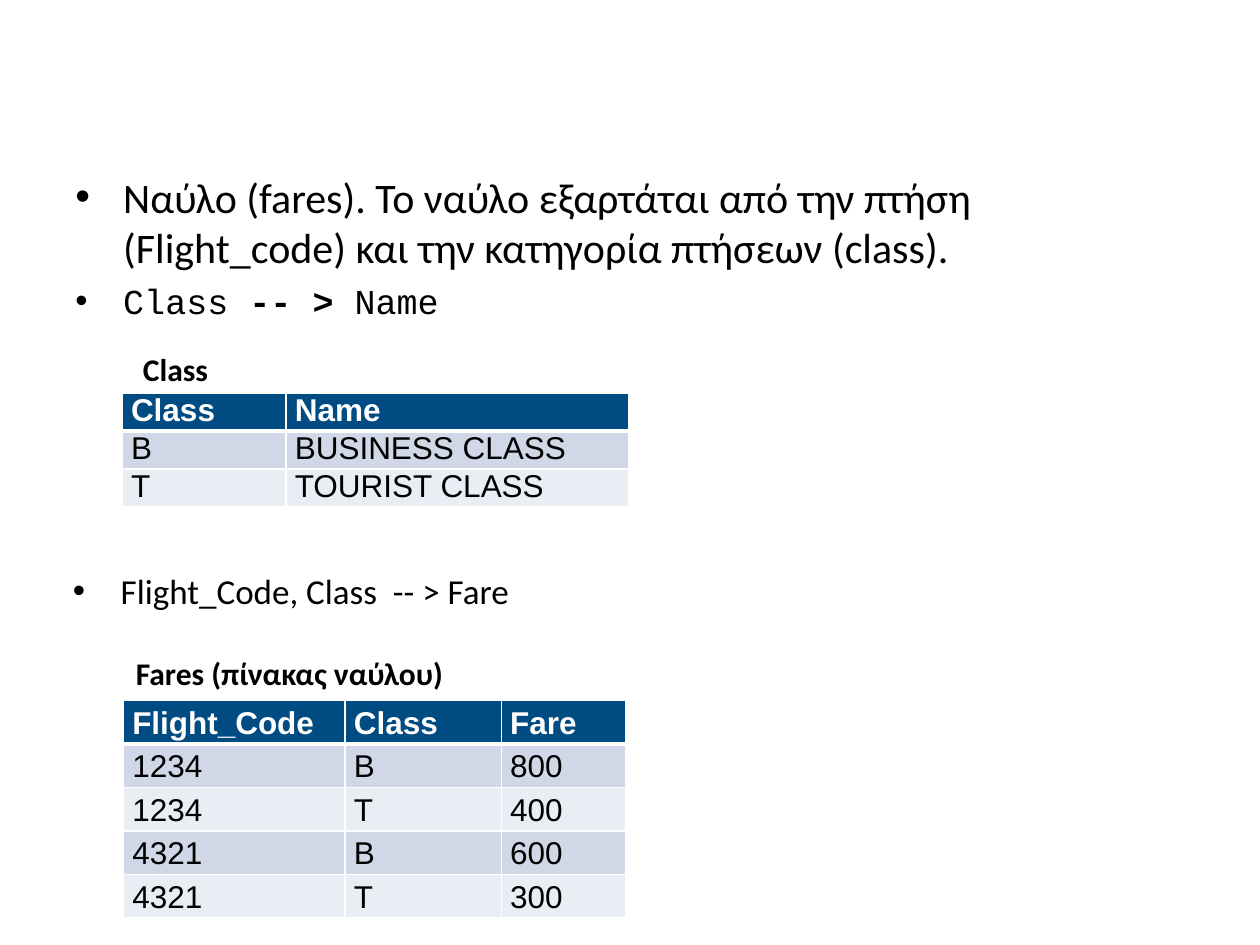
"""Build the slide on fares, their dependencies and the resulting tables."""
from lxml.etree import SubElement
from pptx import Presentation
from pptx.dml.color import RGBColor
from pptx.oxml.ns import qn
from pptx.util import Inches, Pt

WHITE = RGBColor(0xFF, 0xFF, 0xFF)
BLACK = RGBColor(0, 0, 0)
NAVY = RGBColor(0x00, 0x4B, 0x82)
BANDS = [RGBColor(0xD0, 0xD8, 0xE8), RGBColor(0xE9, 0xED, 0xF4)]

BULLET_BOXES = [
    ((0.5, 1.31, 9, 1.56), [
        (24, "Calibri", [("Ναύλο (fares). Το ναύλο εξαρτάται από την πτήση "
                          "(Flight_code) και την κατηγορία πτήσεων (class).", False)]),
        (20, "Courier New", [("Class ", False), ("-- > ", True), ("Name", False)]),
    ]),
    ((0.48, 4.47, 9, 0.63), [
        (20, "Calibri", [("Flight_Code, Class  -- > Fare", False)]),
    ]),
]
CAPTIONS = [
    ((0.98, 2.73, 0.78, 0.4), " Class"),
    ((0.98, 5.14, 2.66, 0.4), "Fares (πίνακας ναύλου)"),
]
TABLES = [
    {"place": (0.97, 3.12), "columns": [1.3, 2.72], "row": 0.28, "spacing": 1.0,
     "rows": [("Class", "Name"), ("B", "BUSINESS CLASS"), ("T", "TOURIST CLASS")]},
    {"place": (0.98, 5.56), "columns": [1.76, 1.24, 0.99], "row": 0.34, "spacing": 1.15,
     "rows": [("Flight_Code", "Class", "Fare"), ("1234", "B", "800"),
              ("1234", "T", "400"), ("4321", "B", "600"), ("4321", "T", "300")]},
]


def set_font(font, size, name, color, bold=False):
    font.size, font.name, font.bold = Pt(size), name, bold
    font.color.rgb = color


def add_bullets(page, place, items):
    frame = page.shapes.add_textbox(*map(Inches, place)).text_frame
    frame.word_wrap = True
    for index, (size, name, spans) in enumerate(items):
        para = frame.add_paragraph() if index else frame.paragraphs[0]
        para.space_before = Pt(size * 0.2)
        set_font(para.font, size, name, BLACK)
        for text, bold in spans:
            span = para.add_run()
            span.text, span.font.bold = text, bold
        props = para._p.get_or_add_pPr()
        props.set("marL", str(Inches(0.38)))
        props.set("indent", str(-Inches(0.38)))
        bullet_font = props.makeelement(qn("a:buFont"), {"typeface": "Arial"})
        bullet = props.makeelement(qn("a:buChar"), {"char": "•"})
        defaults = props.find(qn("a:defRPr"))
        defaults.addprevious(bullet_font)
        defaults.addprevious(bullet)


def add_caption(page, place, text):
    frame = page.shapes.add_textbox(*map(Inches, place)).text_frame
    frame.word_wrap = False
    para = frame.paragraphs[0]
    para.text = text
    set_font(para.font, 18, "Calibri", BLACK, True)


def set_borders(cell, bottom):
    props = cell._tc.get_or_add_tcPr()
    widths = {"lnL": 1, "lnR": 1, "lnT": 1, "lnB": bottom}
    for index, (side, width) in enumerate(widths.items()):
        line = props.makeelement(qn(f"a:{side}"), {"w": str(Pt(width))})
        fill = SubElement(line, qn("a:solidFill"))
        SubElement(fill, qn("a:srgbClr"), val=str(WHITE))
        props.insert(index, line)


def add_grid(page, place, columns, row, spacing, rows):
    size = (sum(columns), row * len(rows))
    table = page.shapes.add_table(len(rows), len(columns),
                                  *map(Inches, place + size)).table
    for column, width in zip(table.columns, columns):
        column.width = Inches(width)
    for i, values in enumerate(rows):
        header = i == 0
        for j, text in enumerate(values):
            cell = table.cell(i, j)
            cell.margin_left = cell.margin_right = Inches(0.07)
            cell.margin_top = cell.margin_bottom = 0
            cell.fill.solid()
            cell.fill.fore_color.rgb = NAVY if header else BANDS[(i - 1) % 2]
            para = cell.text_frame.paragraphs[0]
            para.text = text
            para.line_spacing = spacing
            set_font(para.font, 18, "Arial", WHITE if header else BLACK, header)
            set_borders(cell, 3 if header else 1)
            if i == 1:
                cell._tc.tcPr.find(qn("a:lnT")).set("w", str(Pt(3)))


def main():
    deck = Presentation()
    deck.slide_width, deck.slide_height = Inches(10), Inches(7.5)
    page = deck.slides.add_slide(deck.slide_layouts[6])
    for place, items in BULLET_BOXES:
        add_bullets(page, place, items)
    for place, text in CAPTIONS:
        add_caption(page, place, text)
    for grid in TABLES:
        add_grid(page, **grid)
    deck.save("out.pptx")


if __name__ == "__main__":
    main()
